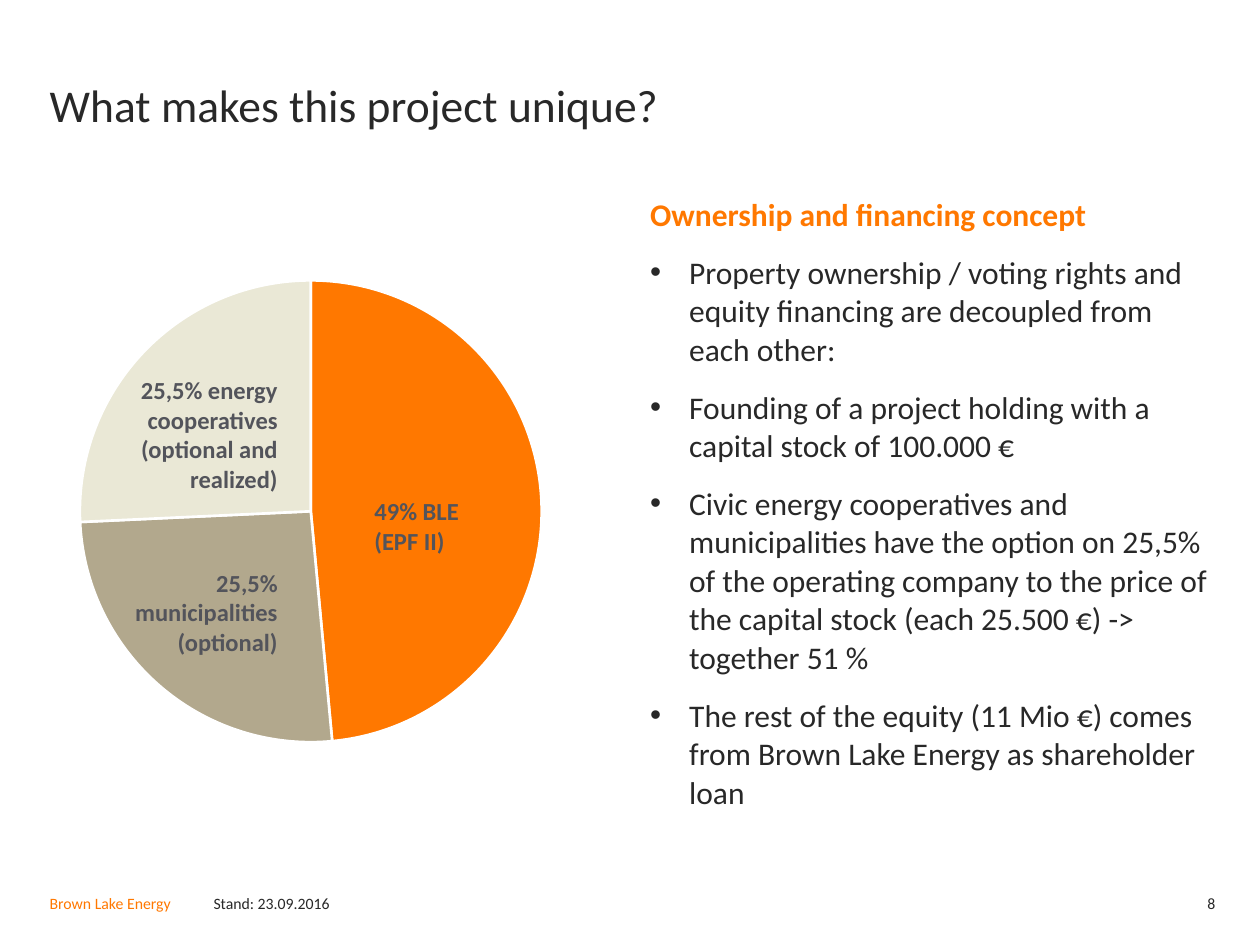
"""Build the slide on the ownership and financing concept."""
import pptx
import pptx.chart.data
import pptx.dml.color
import pptx.enum.chart
import pptx.enum.text
import pptx.oxml
import pptx.oxml.ns
import pptx.util

Pt = pptx.util.Pt
ALIGN = pptx.enum.text.PP_ALIGN
ANCHOR = pptx.enum.text.MSO_ANCHOR
AUTO_SIZE = pptx.enum.text.MSO_AUTO_SIZE

FONT = "Calibri"
COLORS = {
    "orange": "FF7800", "text": "282828", "label": "53545B",
    "sand": "B2A88D", "cream": "EAE8D6", "white": "FFFFFF",
}
TITLE = "What makes this project unique?"
HEADING = "Ownership and financing concept"
BULLETS = [
    "Property ownership / voting rights and equity financing are decoupled from each other:",
    "Founding of a project holding with a capital stock of 100.000 €",
    "Civic energy cooperatives and municipalities have the option on 25,5% of the operating "
    "company to the price of the capital stock (each 25.500 €) -> together 51 %",
    "The rest of the equity (11 Mio €) comes from Brown Lake Energy as shareholder loan",
]
SLICES = [("1", 49, "orange"), ("2", 26, "sand"), ("3", 26, "cream")]
SLICE_LABELS = [
    ("49% BLE (EPF II)", (206.9, 280, 88, 41), ALIGN.LEFT),
    ("25,5% energy cooperatives (optional and realized)", (57.8, 211, 108, 75), ALIGN.RIGHT),
    ("25,5% municipalities (optional)", (65, 321, 100.8, 58.3), ALIGN.RIGHT),
]
FOOTERS = [
    ("Brown Lake Energy", (28.4, 510.5, 93.6, 11.5), ALIGN.LEFT, "orange"),
    ("Stand: 23.09.2016", (122, 510.5, 527, 11.5), ALIGN.LEFT, "text"),
    ("8", (652, 510.5, 42.5, 11.5), ALIGN.RIGHT, "text"),
]
TITLE_BOX = (28.4, 45.4, 666, 85)
BODY_BOX = (371.5, 111.2, 323.3, 357)
CHART_BOX = (-42.7, 150, 440.6, 284.4)
PIE_DIAMETER = 264
BULLET_INDENT = 22.3
NO_MARGINS = dict.fromkeys(("margin_left", "margin_top", "margin_right", "margin_bottom"), 0)


def apply(target, **values):
    for name, value in values.items():
        setattr(target, name, value)


def rgb(color):
    return pptx.dml.color.RGBColor.from_string(COLORS[color])


def write(paragraph, text, size, color, bold=False, **values):
    run = paragraph.add_run()
    run.text = text
    apply(run.font, name=FONT, size=Pt(size), bold=bold)
    run.font.color.rgb = rgb(color)
    apply(paragraph, **values)


def add_text_frame(slide, box, **values):
    frame = slide.shapes.add_textbox(*map(Pt, box)).text_frame
    apply(frame, word_wrap=True, **values)
    return frame


def add_bullet(paragraph):
    properties = paragraph._p.get_or_add_pPr()
    properties.set("marL", str(Pt(BULLET_INDENT)))
    properties.set("indent", str(-Pt(BULLET_INDENT)))
    for tag, name, value in [("buFont", "typeface", "Arial"), ("buChar", "char", "•")]:
        element = pptx.oxml.parse_xml(
            f'<a:{tag} {pptx.oxml.ns.nsdecls("a")} {name}="{value}"/>')
        properties.append(element)


def add_title(slide):
    title = slide.shapes.title
    apply(title, **dict(zip(("left", "top", "width", "height"), map(Pt, TITLE_BOX))))
    apply(title.text_frame, vertical_anchor=ANCHOR.TOP, word_wrap=True, **NO_MARGINS)
    write(title.text_frame.paragraphs[0], TITLE, 26, "text",
          alignment=ALIGN.LEFT, line_spacing=Pt(30))


def add_body(slide):
    frame = add_text_frame(slide, BODY_BOX, **NO_MARGINS)
    spacing = {"line_spacing": Pt(22), "space_after": Pt(11)}
    write(frame.paragraphs[0], HEADING, 18, "orange", bold=True, **spacing)
    for text in BULLETS:
        paragraph = frame.add_paragraph()
        write(paragraph, text, 18, "text", **spacing)
        add_bullet(paragraph)


def add_pie(slide):
    data = pptx.chart.data.CategoryChartData()
    data.categories = [name for name, value, color in SLICES]
    data.add_series("Series 1", [value for name, value, color in SLICES])
    chart = slide.shapes.add_chart(
        pptx.enum.chart.XL_CHART_TYPE.PIE, *map(Pt, CHART_BOX), data).chart
    apply(chart, has_legend=False, has_title=False)
    apply(chart.font, name=FONT, size=Pt(10))
    chart.font.color.rgb = rgb("text")
    plot = chart.plots[0]
    plot.vary_by_categories = True
    for index, (name, value, color) in enumerate(SLICES):
        point_format = plot.series[0].points[index].format
        point_format.fill.solid()
        point_format.fill.fore_color.rgb = rgb(color)
        point_format.line.color.rgb = rgb("white")
        point_format.line.width = Pt(1.5)
    width, height = (round(PIE_DIAMETER / side, 3) for side in CHART_BOX[2:])
    places = {"x": (1 - width) / 2, "y": (1 - height) / 2, "w": width, "h": height}
    values = "".join(f'<c:{key} val="{value:.4f}"/>' for key, value in places.items())
    plot_area = chart._chartSpace.chart.plotArea
    for layout in plot_area.findall(pptx.oxml.ns.qn("c:layout")):
        plot_area.remove(layout)
    plot_area.insert(0, pptx.oxml.parse_xml(
        f'<c:layout {pptx.oxml.ns.nsdecls("c")}><c:manualLayout>'
        '<c:layoutTarget val="inner"/><c:xMode val="edge"/><c:yMode val="edge"/>'
        f'{values}</c:manualLayout></c:layout>'))


def main():
    presentation = pptx.Presentation()
    apply(presentation, slide_width=Pt(720), slide_height=Pt(540))
    slide = presentation.slides.add_slide(presentation.slide_layouts[5])
    add_title(slide)
    add_body(slide)
    add_pie(slide)
    for text, box, alignment in SLICE_LABELS:
        frame = add_text_frame(slide, box, auto_size=AUTO_SIZE.SHAPE_TO_FIT_TEXT)
        write(frame.paragraphs[0], text, 14, "label", bold=True, alignment=alignment)
    for text, box, alignment, color in FOOTERS:
        frame = add_text_frame(slide, box, vertical_anchor=ANCHOR.MIDDLE, **NO_MARGINS)
        write(frame.paragraphs[0], text, 9, color, alignment=alignment)
    presentation.save("out.pptx")


if __name__ == "__main__":
    main()
